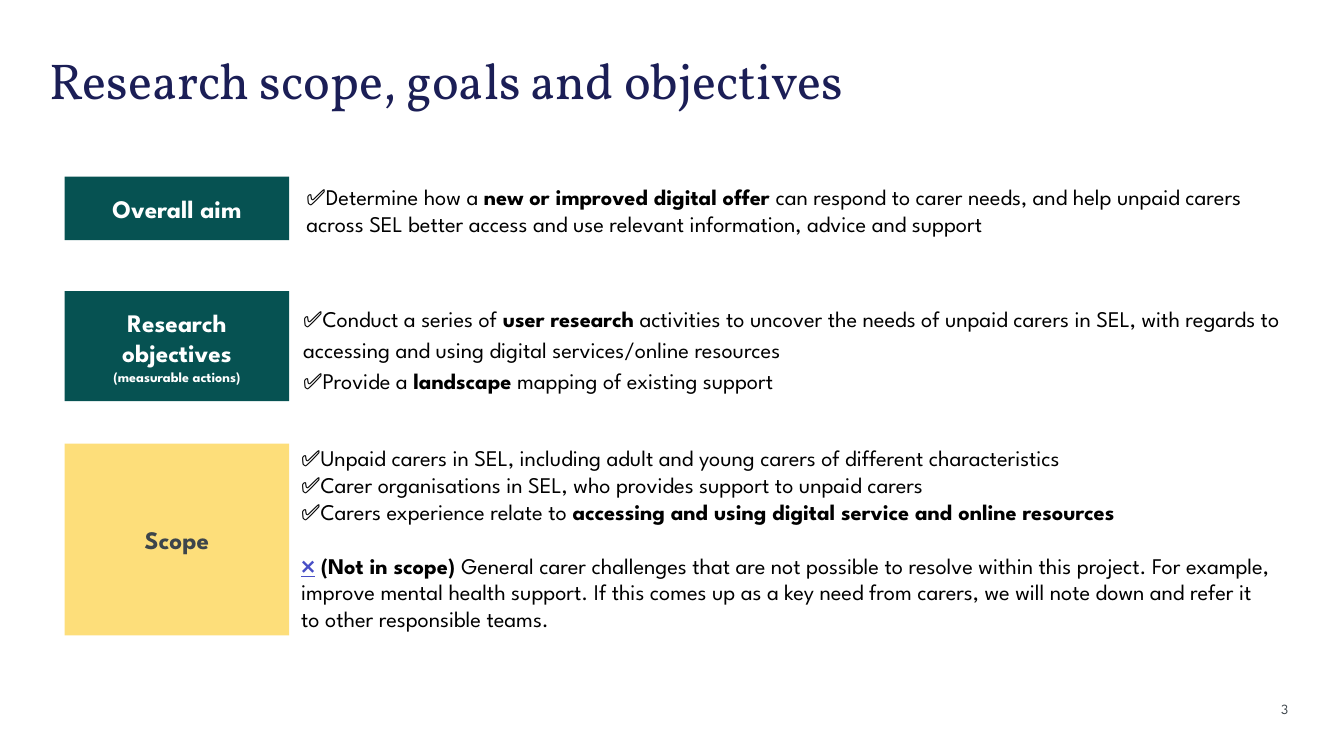
from dataclasses import dataclass

import pptx
import pptx.dml.color
import pptx.enum.shapes
import pptx.enum.text
import pptx.oxml.xmlchemy
import pptx.shapes.autoshape
import pptx.slide
import pptx.text.text
import pptx.util
from lxml import etree

Cm = pptx.util.Cm
ALIGN = pptx.enum.text.PP_ALIGN
ANCHOR = pptx.enum.text.MSO_ANCHOR

COLOURS = {
    "navy": "1B1E56",
    "teal": "065252",
    "yellow": "FDDE7A",
    "slate": "3D454B",
    "indigo": "484FC6",
    "black": "000000",
    "white": "FFFFFF",
}
BODY_FONT = "League Spartan"
LABEL_LEFT, LABEL_WIDTH = 1.63, 5.66
DRAWING_NAMESPACE = "http://schemas.openxmlformats.org/drawingml/2006/main"


@dataclass(frozen=True)
class Run:
    text: str
    bold: bool = False
    size: float = 16
    colour: str = "black"
    font: str = BODY_FONT
    underline: bool = False


@dataclass(frozen=True)
class Paragraph:
    runs: list[Run]
    align: ALIGN = ALIGN.LEFT
    line_spacing: float = 1.0
    space_before: float = 0


@dataclass(frozen=True)
class Box:
    left: float
    top: float
    width: float
    height: float


@dataclass(frozen=True)
class Label:
    top: float
    height: float
    fill: str
    runs: list[Run]


@dataclass(frozen=True)
class Statement:
    box: Box
    paragraphs: list[Paragraph]


def label_run(text: str, colour: str = "white", size: float = 18) -> Run:
    return Run(text, bold=True, size=size, colour=colour)


LABELS = [
    Label(4.45, 1.6, "teal", [label_run("Overall aim")]),
    Label(7.34, 2.77, "teal", [label_run("Research objectives"),
                               label_run("(measurable actions)", size=10)]),
    Label(11.18, 4.83, "yellow", [label_run("Scope", "slate")]),
]

AIM = Statement(Box(7.47, 4.45, 24.97, 1.7), [
    Paragraph([
        Run("✅"),
        Run("Determine how a "),
        Run("new or improved digital offer", bold=True),
        Run(" can respond to carer needs, and help unpaid carers across SEL "
            "better access and use relevant information, advice and support"),
    ]),
])

OBJECTIVES = Statement(Box(7.39, 7.34, 25.5, 2.77), [
    Paragraph([
        Run("✅"),
        Run("Conduct a series of"),
        Run(" user research", bold=True),
        Run(" activities to uncover the needs of unpaid carers in SEL, with regards "
            "to accessing and using digital services/online resources"),
    ], line_spacing=1.15),
    Paragraph([
        Run("✅"),
        Run("Provide a "),
        Run("landscape", bold=True),
        Run(" mapping of existing support"),
    ], line_spacing=1.15),
])

SCOPE = Statement(Box(7.34, 10.95, 24.97, 5.31), [
    Paragraph([
        Run("✅"),
        Run("Unpaid carers in SEL, including adult and young carers of "
            "different characteristics"),
    ]),
    Paragraph([
        Run("✅"),
        Run("Carer organisations in SEL, who provides support to unpaid carers"),
    ]),
    Paragraph([
        Run("✅"),
        Run("Carers experience relate to "),
        Run("accessing and using digital service and online resources", bold=True),
    ]),
    Paragraph([
        Run("❌", size=15, colour="indigo", font="Arial", underline=True),
        Run(" "),
        Run("(Not in scope) ", bold=True),
        Run("General carer challenges that are not possible to resolve within this "
            "project. For example, improve mental health support. If this comes up "
            "as a key need from carers, we will note down and refer it to other "
            "responsible teams."),
    ], space_before=19),
])


def rgb(name: str) -> pptx.dml.color.RGBColor:
    return pptx.dml.color.RGBColor.from_string(COLOURS[name])


def place(shape: pptx.shapes.autoshape.Shape, box: Box) -> None:
    shape.left, shape.top = Cm(box.left), Cm(box.top)
    shape.width, shape.height = Cm(box.width), Cm(box.height)


def remove_bullet(paragraph: pptx.text.text._Paragraph) -> None:
    properties = paragraph._p.get_or_add_pPr()
    properties.set("marL", "0")
    properties.set("indent", "0")
    etree.SubElement(properties, f"{{{DRAWING_NAMESPACE}}}buNone")


def write(shape: pptx.shapes.autoshape.Shape, paragraphs: list[Paragraph],
          anchor: ANCHOR = ANCHOR.TOP, inset: float = 0.25) -> None:
    frame = shape.text_frame
    frame.word_wrap = True
    frame.auto_size = pptx.enum.text.MSO_AUTO_SIZE.NONE
    frame.vertical_anchor = anchor
    frame.margin_left = frame.margin_right = Cm(inset)
    frame.margin_top = frame.margin_bottom = Cm(inset)
    for index, content in enumerate(paragraphs):
        paragraph = frame.add_paragraph() if index else frame.paragraphs[0]
        if shape.is_placeholder:
            remove_bullet(paragraph)
        paragraph.alignment = content.align
        paragraph.line_spacing = content.line_spacing
        paragraph.space_before = pptx.util.Pt(content.space_before)
        for part in content.runs:
            run = paragraph.add_run()
            run.text = part.text
            run.font.name = part.font
            run.font.size = pptx.util.Pt(part.size)
            run.font.bold = part.bold
            run.font.underline = part.underline
            run.font.color.rgb = rgb(part.colour)


def add_text(slide: pptx.slide.Slide, statement: Statement, inset: float = 0.25) -> None:
    box = statement.box
    shape = slide.shapes.add_textbox(Cm(box.left), Cm(box.top),
                                     Cm(box.width), Cm(box.height))
    write(shape, statement.paragraphs, ANCHOR.MIDDLE, inset)


def add_label(slide: pptx.slide.Slide, label: Label) -> None:
    shape = slide.shapes.add_shape(
        pptx.enum.shapes.MSO_SHAPE.RECTANGLE,
        Cm(LABEL_LEFT), Cm(label.top), Cm(LABEL_WIDTH), Cm(label.height))
    shape.shadow.inherit = False
    shape.fill.solid()
    shape.fill.fore_color.rgb = rgb(label.fill)
    shape.line.fill.background()
    write(shape, [Paragraph([run], ALIGN.CENTER) for run in label.runs], ANCHOR.MIDDLE)


def main() -> None:
    presentation = pptx.Presentation()
    presentation.slide_width, presentation.slide_height = Cm(33.87), Cm(19.05)
    slide = presentation.slides.add_slide(
        presentation.slide_layouts.get_by_name("Two Content"))

    title, *bodies = slide.placeholders
    place(title, Box(1.24, 1.42, 22.4, 3.02))
    heading = Run("Research scope, goals and objectives", size=36,
                  colour="navy", font="Vollkorn")
    write(title, [Paragraph([heading], line_spacing=0.9)], inset=0)

    for body, statement in zip(bodies, (OBJECTIVES, SCOPE)):
        place(body, statement.box)
        write(body, statement.paragraphs)

    for label in LABELS:
        add_label(slide, label)
    add_text(slide, AIM)
    page_number = Paragraph([Run("3", size=10, colour="slate")], ALIGN.RIGHT)
    add_text(slide, Statement(Box(31.17, 17.53, 1.5, 0.69), [page_number]), inset=0.2)
    presentation.save("out.pptx")


if __name__ == "__main__":
    main()
